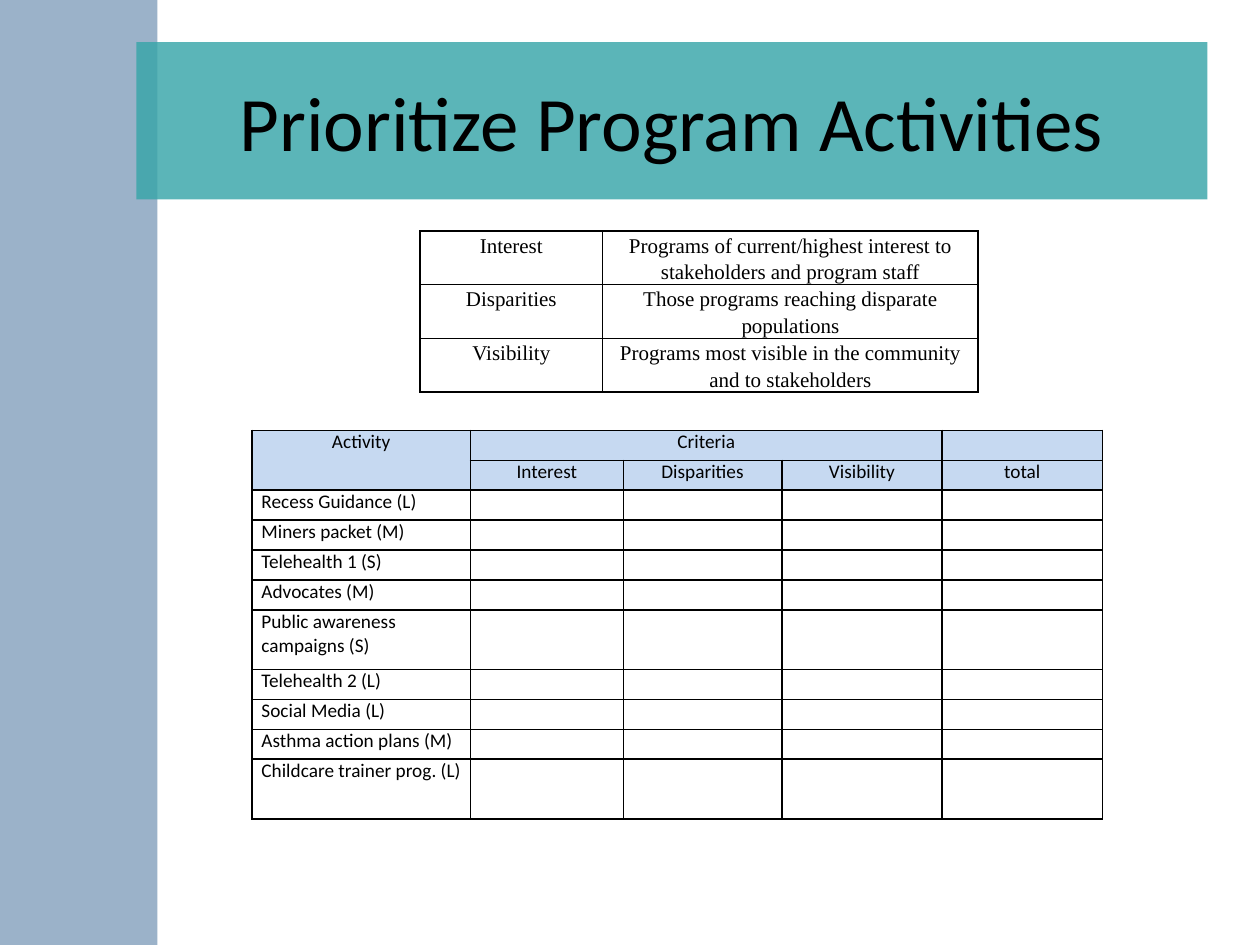
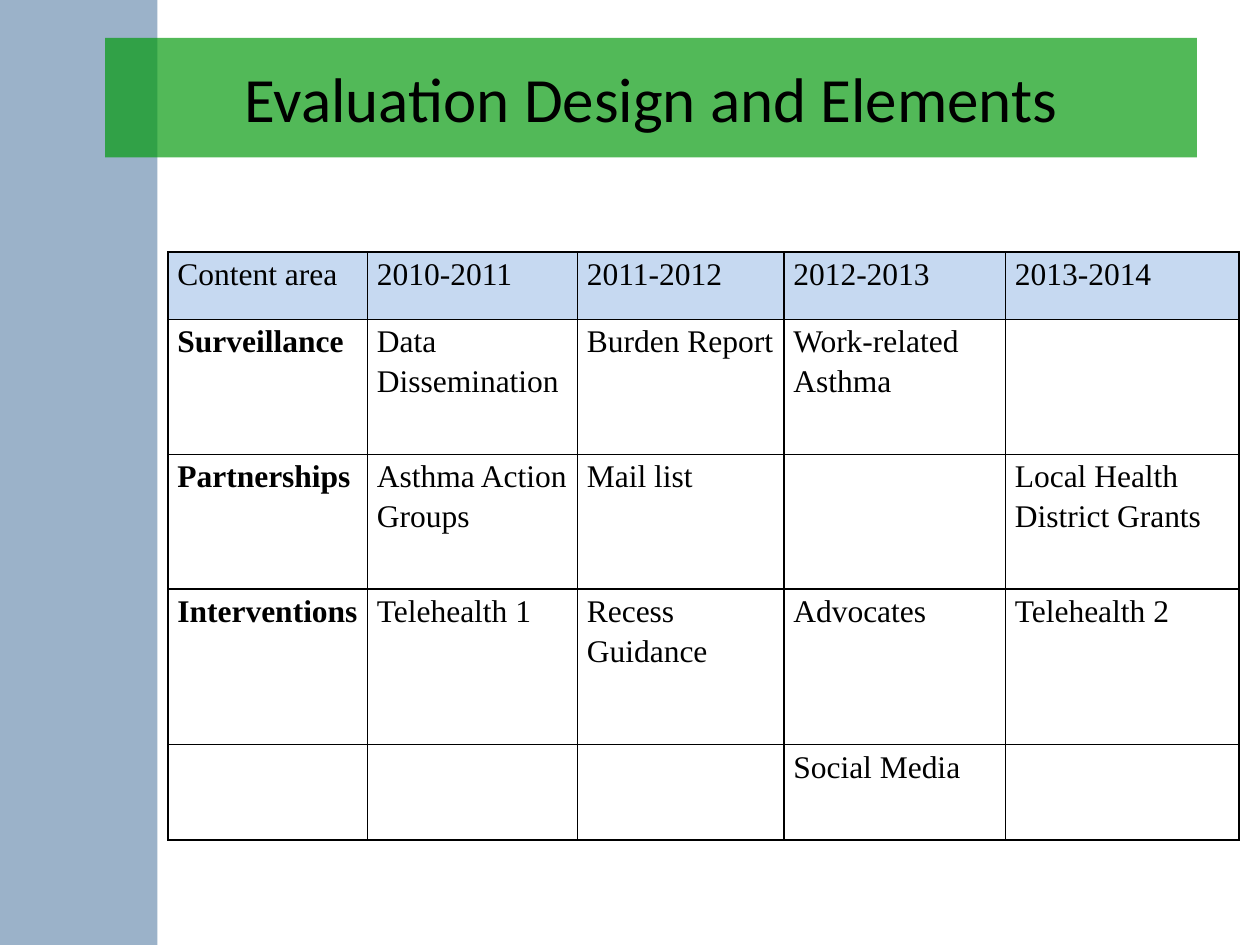
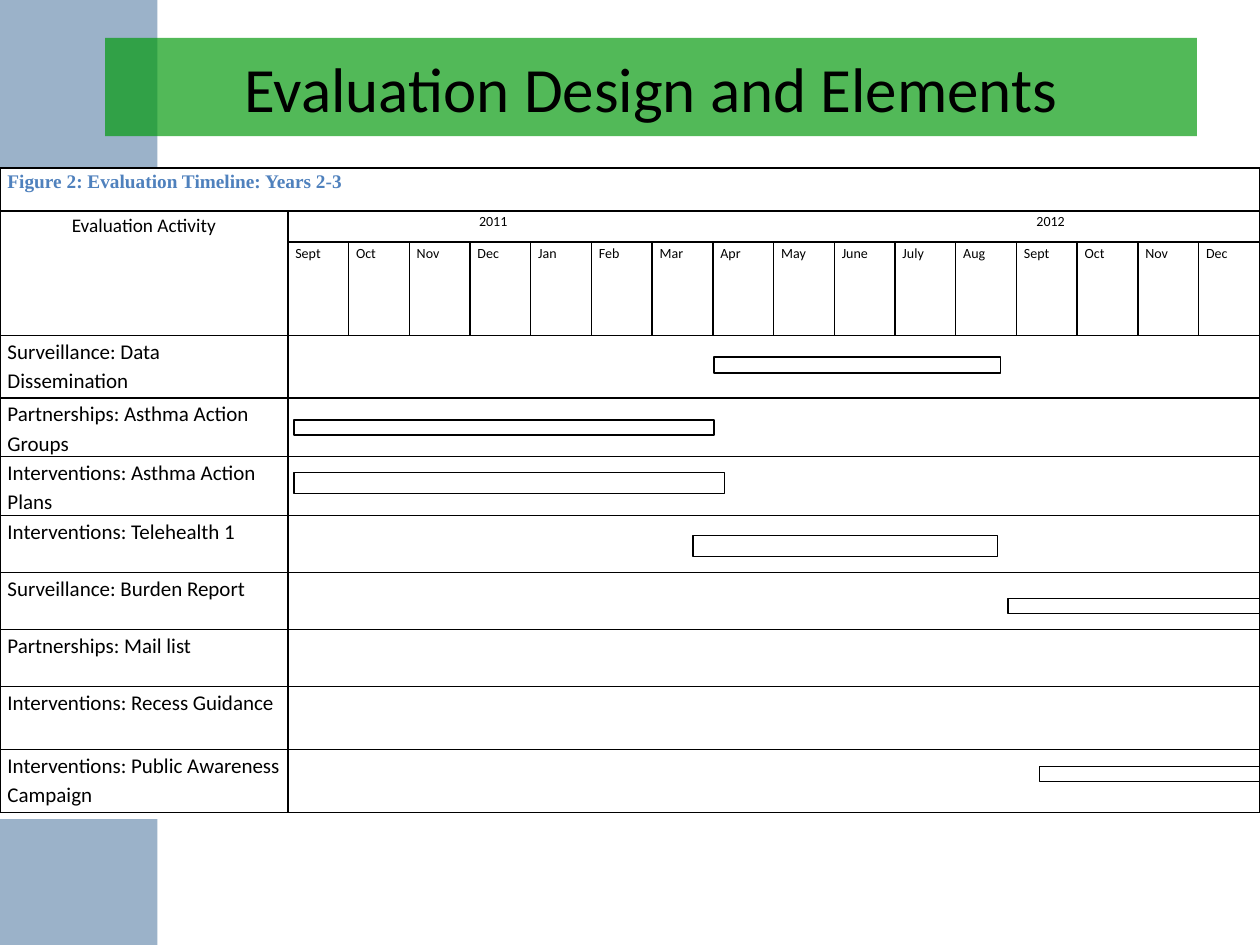
from lxml import etree
from pptx import Presentation
from pptx.dml import color as dml
from pptx.enum import shapes, text
from pptx.oxml import ns
from pptx.util import Pt

BLACK, WHITE = "000000", "FFFFFF"
SIDE_BLUE, HEADER_BLUE, CAPTION_BLUE = "306090", "C6D9F1", "4F81BD"
TEAL, GREEN = "36A5A8", "00990A"
SANS, SERIF = "Calibri", "Times New Roman"
rgb = dml.RGBColor.from_string


def add_box(page, place, fill, opacity=100, outline=None):
    """Add a plain rectangle; place is left, top, width, height."""
    box = page.shapes.add_shape(shapes.MSO_SHAPE.RECTANGLE, *map(Pt, place))
    box.shadow.inherit = False
    box.fill.solid()
    box.fill.fore_color.rgb = rgb(fill)
    if opacity < 100:
        tint = box.fill._xPr.find(".//" + ns.qn("a:srgbClr"))
        etree.SubElement(tint, ns.qn("a:alpha"), val=str(opacity * 1000))
    if outline:
        box.line.color.rgb = rgb(outline)
        box.line.width = Pt(0.75)
    else:
        box.line.fill.background()
    return box


def add_grid(page, corner, widths, heights, rows, font, size, inset=5.4,
             header_rows=0, centered_rows=0, spaced=True, merges=()):
    """Add a ruled table; short rows are left empty on the right."""
    table = page.shapes.add_table(
        len(heights), len(widths), *map(Pt, corner),
        Pt(sum(widths)), Pt(sum(heights))).table
    table.first_row = table.horz_banding = False
    for column, width in zip(table.columns, widths):
        column.width = Pt(width)
    for row, height in zip(table.rows, heights):
        row.height = Pt(height)
    for top, left, bottom, right in merges:
        table.cell(top, left).merge(table.cell(bottom, right))

    for r in range(len(heights)):
        for c in range(len(widths)):
            cell = table.cell(r, c)
            cell.margin_left = cell.margin_right = Pt(inset)
            cell.margin_top = cell.margin_bottom = 0
            for side in ("a:lnL", "a:lnR", "a:lnT", "a:lnB"):
                border = etree.SubElement(cell._tc.tcPr, ns.qn(side), w=str(Pt(1)))
                paint = etree.SubElement(border, ns.qn("a:solidFill"))
                etree.SubElement(paint, ns.qn("a:srgbClr"), val=BLACK)
            if r < header_rows:
                cell.fill.solid()
                cell.fill.fore_color.rgb = rgb(HEADER_BLUE)
            else:
                cell.fill.background()

            para = cell.text_frame.paragraphs[0]
            para.text = rows[r][c] if c < len(rows[r]) else ""
            if r < centered_rows:
                para.alignment = text.PP_ALIGN.CENTER
            if spaced:
                para.line_spacing = 1.15
                para.space_after = Pt(10)
            for span in para.runs:
                span.font.name = font
                span.font.size = Pt(size)
                span.font.color.rgb = rgb(BLACK)
            if not para.runs:
                etree.SubElement(para._p, ns.qn("a:endParaRPr"), sz=str(size * 100))
    return table


deck = Presentation()
deck.slide_width, deck.slide_height = Pt(720), Pt(540)

# Side band and title bar of every slide
titles = [
    ("Prioritize Program Activities", 44, (78, 24, 612, 90), TEAL, 81),
    ("Evaluation Design and Elements", 36, (60, 21.6, 624, 68.4), GREEN, 68),
    ("Evaluation Design and Elements", 36, (60, 21.6, 624, 56.2), GREEN, 68),
]
pages = []
for title, size, place, fill, opacity in titles:
    page = deck.slides.add_slide(deck.slide_layouts[6])
    add_box(page, (0, 0, 90, 540), SIDE_BLUE, 48)
    bar = add_box(page, place, fill, opacity)
    bar.text_frame.word_wrap = True
    bar.text_frame.vertical_anchor = text.MSO_ANCHOR.MIDDLE
    para = bar.text_frame.paragraphs[0]
    para.text = title
    para.alignment = text.PP_ALIGN.CENTER
    para.font.name = SANS
    para.font.size = Pt(size)
    para.font.color.rgb = rgb(BLACK)
    pages.append(page)
priorities, design, timeline = pages

# Slide 1: scoring sheet
activities = [
    "Recess Guidance (L)", "Miners packet (M)", "Telehealth 1 (S)",
    "Advocates (M)", "Public awareness campaigns (S)", "Telehealth 2 (L)",
    "Social Media (L)", "Asthma action plans (M)", "Childcare trainer prog. (L)",
]
add_grid(
    priorities, (144, 245.9), [124.8, 87.4, 90.6, 91.6, 91.6],
    [17.1] * 6 + [34.1] + [17.1] * 3 + [34.1],
    [["Activity", "Criteria"], ["", "Interest", "Disparities", "Visibility", "total"]]
    + [[activity] for activity in activities],
    SANS, 11, header_rows=2, centered_rows=2, spaced=False,
    merges=[(0, 0, 1, 0), (0, 1, 0, 3)])

# Slide 1: meaning of the criteria
criteria = [
    ["Interest", "Programs of current/highest interest to stakeholders and program staff"],
    ["Disparities", "Those programs reaching disparate populations"],
    ["Visibility", "Programs most visible in the community and to stakeholders"],
]
add_grid(priorities, (240, 132), [104.4, 214.6], [30.6] * 3, criteria,
         SERIF, 12, centered_rows=3)

# Slide 2: content areas by year
areas = [
    ["Content area", "2010-2011", "2011-2012", "2012-2013", "2013-2014"],
    ["Surveillance", "Data Dissemination", "Burden Report", "Work-related Asthma"],
    ["Partnerships", "Asthma Action Groups", "Mail list", "",
     "Local Health District Grants"],
    ["Interventions", "Telehealth 1", "Recess Guidance", "Advocates", "Telehealth 2"],
    ["", "", "", "Social Media"],
]
area_table = add_grid(design, (96, 144), [114, 120, 118, 126.6, 133.4],
                      [38.6, 77, 77, 89, 54.4], areas, SERIF, 18, header_rows=1)
for r in range(1, 4):
    area_table.cell(r, 0).text_frame.paragraphs[0].runs[0].font.bold = True

# Slide 3: timeline table on a white panel
add_box(timeline, (0, 96, 696, 372), WHITE)
months = ("Sept Oct Nov Dec Jan Feb Mar Apr May June July Aug "
          "Sept Oct Nov Dec").split()
tasks = [
    "Surveillance: Data Dissemination", "Partnerships: Asthma Action Groups",
    "Interventions: Asthma Action Plans", "Interventions: Telehealth 1",
    "Surveillance: Burden Report", "Partnerships: Mail list",
    "Interventions: Recess Guidance", "Interventions: Public Awareness Campaign",
]
month_count = len(months)
schedule = add_grid(
    timeline, (0, 96), [164.48] + [34.72] * month_count,
    [24.5, 17.8, 53.6, 35.5, 33.6, 33.6, 32.6, 32.6, 32.6, 36, 36],
    [["Figure 2: Evaluation Timeline: Years 2-3"],
     ["Evaluation Activity", "\t2011\t2012"], [""] + months]
    + [[task] for task in tasks],
    SANS, 12, inset=4.3,
    merges=[(0, 0, 0, month_count), (1, 0, 2, 0), (1, 1, 1, month_count)]
    + [(r, 1, r, month_count) for r in range(3, 3 + len(tasks))])

caption = schedule.cell(0, 0).text_frame.paragraphs[0].runs[0].font
caption.name, caption.size, caption.bold = SERIF, Pt(11), True
caption.color.rgb = rgb(CAPTION_BLUE)

heading = schedule.cell(1, 0).text_frame.paragraphs[0]
heading.alignment = text.PP_ALIGN.CENTER
heading.runs[0].font.size = Pt(11)

years = schedule.cell(1, 1).text_frame.paragraphs[0]
tabs = etree.SubElement(years._p.get_or_add_pPr(), ns.qn("a:tabLst"))
for position in (105, 423.5):
    etree.SubElement(tabs, ns.qn("a:tab"), pos=str(Pt(position)), algn="l")
month_cells = [schedule.cell(2, c + 1) for c in range(month_count)]
for cell in [schedule.cell(1, 1)] + month_cells:
    for span in cell.text_frame.paragraphs[0].runs:
        span.font.size = Pt(8)

# Slide 3: activity bars
bars = [
    (168, 240, 240, 8.6), (576, 342, 144, 8.6), (396, 306, 174, 12),
    (408, 204, 163.6, 9.2), (594, 438, 126, 8.6), (168, 270, 246, 12),
]
for place in bars:
    add_box(timeline, place, WHITE, outline=BLACK)

deck.save("out.pptx")
